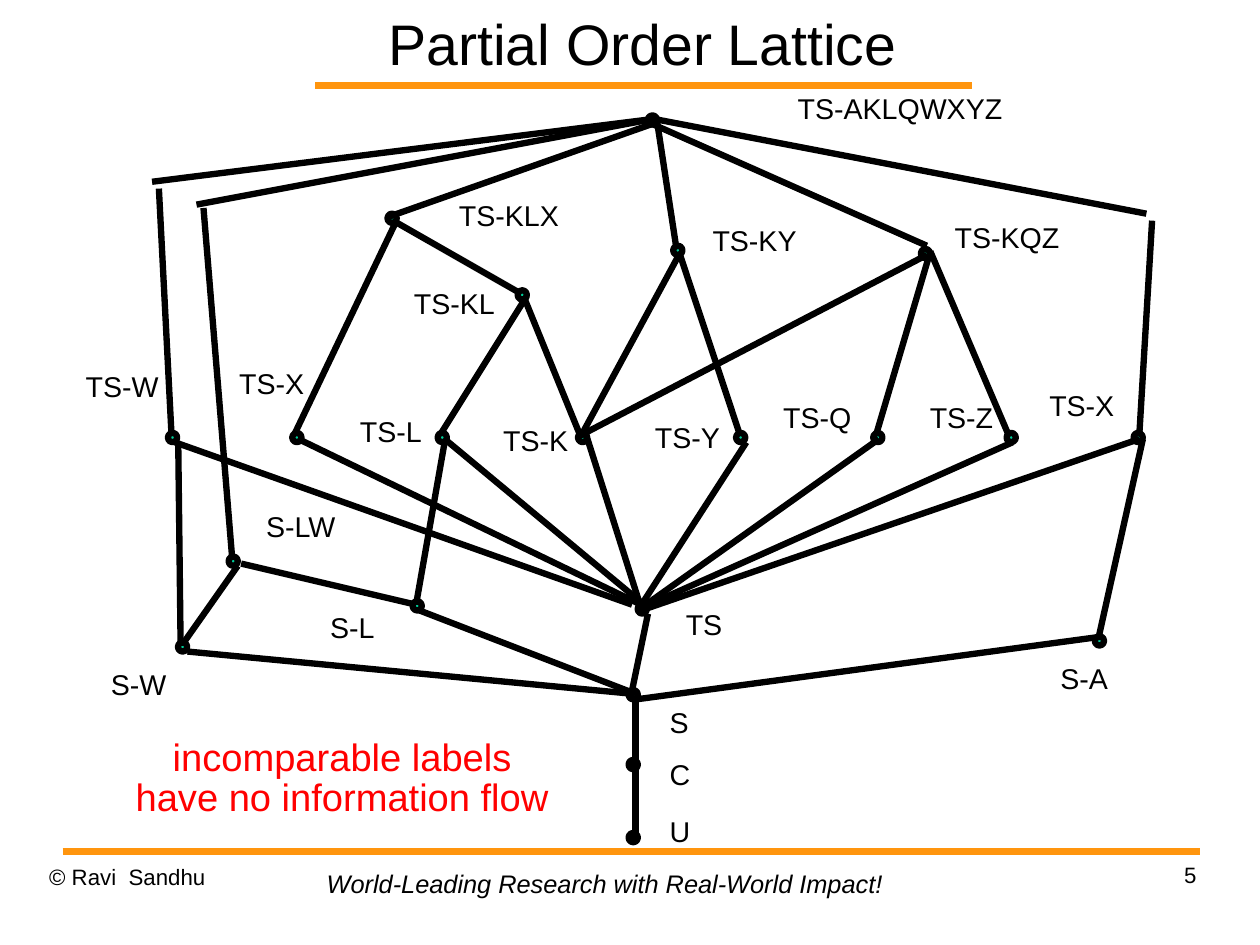
from dataclasses import dataclass

from pptx import Presentation
from pptx.dml.color import RGBColor
from pptx.enum.shapes import MSO_CONNECTOR, MSO_SHAPE
from pptx.enum.text import MSO_ANCHOR, MSO_AUTO_SIZE, PP_ALIGN
from pptx.oxml.ns import qn
from pptx.util import Pt

STRAIGHT = MSO_CONNECTOR.STRAIGHT
OVAL = MSO_SHAPE.OVAL
LEFT, CENTER, RIGHT = PP_ALIGN.LEFT, PP_ALIGN.CENTER, PP_ALIGN.RIGHT
TOP, MIDDLE = MSO_ANCHOR.TOP, MSO_ANCHOR.MIDDLE
FIXED, GROW = MSO_AUTO_SIZE.NONE, MSO_AUTO_SIZE.SHAPE_TO_FIT_TEXT


@dataclass(frozen=True)
class Theme:
    font: str = "Arial"
    ink: RGBColor = RGBColor(0, 0, 0)
    rule: RGBColor = RGBColor(0xFF, 0x95, 0x0E)
    dot: RGBColor = RGBColor(0x00, 0xCC, 0x99)
    warning: RGBColor = RGBColor(0xFF, 0, 0)
    title_size: int = 36
    note_size: int = 24
    label_size: int = 18
    tagline_size: int = 16
    footer_size: int = 14
    edge_width: float = 4
    rule_width: float = 4.31


THEME = Theme()
PAGE_WIDTH, PAGE_HEIGHT = 793.75, 595.25
DOT_SIZE = 5.8
LABEL_HEIGHT = 26.6
LABEL_INSETS = (5, 2)

# Centres of the lattice dots
SINGLE_ROW_Y = 275.6
SINGLE_ROW_X = (108.7, 187, 278.6, 367, 466.6, 553, 637, 717)
DOTS = [(x, SINGLE_ROW_Y) for x in SINGLE_ROW_X] + [
    (411, 75.6),
    (247, 137.5), (427, 157.7), (583, 159.7), (329, 185.8),
    (146.9, 353.5), (262.8, 381.6), (115, 407.5), (692.6, 403.7),
    (404.6, 383.6), (398.9, 437.6), (398.9, 481.6), (398.9, 527.6),
]

# Edges as x1, y1, x2, y2
TOP_EDGES = [
    (414, 77, 244.1, 136.8), (414, 77, 426.2, 157),
    (411.8, 78.5, 583.9, 154.8), (411.8, 74.9, 123.8, 128.9),
    (411.8, 74.9, 95.8, 114.5), (411.8, 74.9, 722.2, 134.6),
]
OUTER_EDGES = [
    (128.2, 131, 146.2, 350.6), (100.1, 118.8, 108, 272.9),
    (725.8, 139, 717.8, 272.9),
]
COMPOUND_EDGES = [
    (249.8, 139, 185.8, 272.9), (247.7, 139, 328.3, 185),
    (331.9, 186.5, 277.9, 272.9), (329.8, 186.5, 365.8, 275),
    (427.7, 160.6, 365.8, 275), (427.7, 158.4, 465.8, 272.9),
    (583.9, 160.6, 364.3, 275), (586.1, 158.4, 635.8, 275),
    (586.1, 158.4, 552.2, 272.9),
]
EDGES_TO_TS = [
    (110.2, 278.6, 398.2, 380.9), (187.9, 276.5, 408.2, 383),
    (280.1, 276.5, 408.2, 383), (370.1, 276.5, 403.9, 383),
    (470.2, 278.6, 401.8, 384.5), (553.7, 276.5, 403.9, 383),
    (637.9, 278.6, 403.9, 383), (717.8, 276.5, 403.9, 384.5),
]
SECRET_EDGES = [
    (112.3, 278.6, 113.8, 406.8), (280.1, 278.6, 262.1, 380.9),
    (720, 276.5, 691.9, 402.5), (149.8, 356.4, 115.9, 404.6),
    (151.9, 355, 262.1, 380.9), (264.2, 384.5, 400.3, 437),
    (118.1, 410.4, 398.2, 437), (400.3, 440.6, 694.1, 401),
    (408.2, 386.6, 398.2, 434.9), (400.3, 440.6, 400.3, 528.5),
]
EDGES = TOP_EDGES + OUTER_EDGES + COMPOUND_EDGES + EDGES_TO_TS + SECRET_EDGES

# Labels as text, left, top, width
LEFT_LABELS = [
    ("TS-W", 49, 233.8, 59.8), ("S-LW", 162.7, 321.6, 59.8),
    ("S-L", 203, 385.7, 43.2), ("S-W", 64.8, 421.7, 49),
    ("S-A", 663, 417.4, 44.6), ("TS", 427, 383.6, 36.7),
    ("S", 416.9, 445.6, 25.9), ("C", 416.9, 477.8, 27.4),
    ("U", 416.9, 513.9, 27.4),
]
RIGHT_LABELS = [
    ("TS-AKLQWXYZ", 490.3, 58.3, 146.2), ("TS-KLX", 277.9, 126, 79.2),
    ("TS-KY", 439.2, 141.6, 67.7), ("TS-KQZ", 591.8, 139.7, 80.6),
    ("TS-KL", 249.8, 181.6, 67), ("TS-X", 142, 231.6, 54.7),
    ("TS-L", 216.7, 261.9, 54), ("TS-K", 306.7, 267.6, 56.2),
    ("TS-Y", 403.9, 265.7, 54.7), ("TS-Q", 486, 253.4, 55.4),
    ("TS-Z", 576.7, 253.4, 54), ("TS-X", 652.3, 245.5, 54.7),
]


def set_text(box, text, size, color=THEME.ink, align=LEFT, spacing=1.0,
             insets=(0, 0), wrap=True, fit=FIXED, anchor=TOP, italic=False):
    frame = box.text_frame
    frame.text = text
    frame.word_wrap = wrap
    frame.auto_size = fit
    frame.vertical_anchor = anchor
    frame.margin_left = frame.margin_right = Pt(insets[0])
    frame.margin_top = frame.margin_bottom = Pt(insets[1])
    para = frame.paragraphs[0]
    para.alignment = align
    para.line_spacing = spacing
    para.font.name = THEME.font
    para.font.size = Pt(size)
    para.font.italic = italic
    para.font.color.rgb = color


def add_text(page, bounds, text, size, **style):
    box = page.shapes.add_textbox(*map(Pt, bounds))
    set_text(box, text, size, **style)


def add_label(page, label, align):
    text, left, top, width = label
    add_text(page, (left, top, width, LABEL_HEIGHT), text, THEME.label_size,
             align=align, spacing=0.85, insets=LABEL_INSETS, wrap=False, fit=GROW)


def add_line(page, ends, color, width):
    line = page.shapes.add_connector(STRAIGHT, *map(Pt, ends))
    line.line.color.rgb = color
    line.line.width = Pt(width)
    properties = line._element.spPr
    properties.append(properties.makeelement(qn("a:effectLst"), {}))


def add_dot(page, center):
    left, top = (value - DOT_SIZE / 2 for value in center)
    dot = page.shapes.add_shape(OVAL, Pt(left), Pt(top), Pt(DOT_SIZE), Pt(DOT_SIZE))
    dot.shadow.inherit = False
    dot.fill.solid()
    dot.fill.fore_color.rgb = THEME.dot
    dot.line.color.rgb = THEME.ink
    dot.line.width = Pt(THEME.edge_width)


def main():
    deck = Presentation()
    deck.slide_width, deck.slide_height = Pt(PAGE_WIDTH), Pt(PAGE_HEIGHT)
    page = deck.slides.add_slide(deck.slide_layouts[5])

    # Title and rules
    for ends in ((198.5, 54, 612.5, 54), (39.4, 536.2, 755.8, 536.2)):
        add_line(page, ends, THEME.rule, THEME.rule_width)
    title = page.shapes.title
    title.left, title.top, title.width, title.height = map(Pt, (173.3, 0, 463, 54))
    set_text(title, "Partial Order Lattice", THEME.title_size,
             align=CENTER, anchor=MIDDLE)

    # Lattice
    for center in DOTS:
        add_dot(page, center)
    for ends in EDGES:
        add_line(page, ends, THEME.ink, THEME.edge_width)
    for labels, align in ((LEFT_LABELS, LEFT), (RIGHT_LABELS, RIGHT)):
        for label in labels:
            add_label(page, label, align)

    # Note
    add_text(page, (76, 463.5, 279, 55.4),
             "incomparable labels have no information flow", THEME.note_size,
             color=THEME.warning, align=CENTER, spacing=0.88,
             insets=LABEL_INSETS, fit=GROW)

    # Footer
    add_text(page, (31, 543.6, 185, 41), "© Ravi  Sandhu", THEME.footer_size,
             spacing=1.01)
    add_text(page, (198.7, 543.6, 365.8, 26.6),
             "World-Leading Research with Real-World Impact!", THEME.tagline_size,
             insets=(7.2, 3.6), wrap=False, fit=GROW, italic=True)
    add_text(page, (568.8, 542.2, 185, 41), "5", THEME.footer_size,
             align=RIGHT, spacing=1.01)

    deck.save("out.pptx")


if __name__ == "__main__":
    main()
